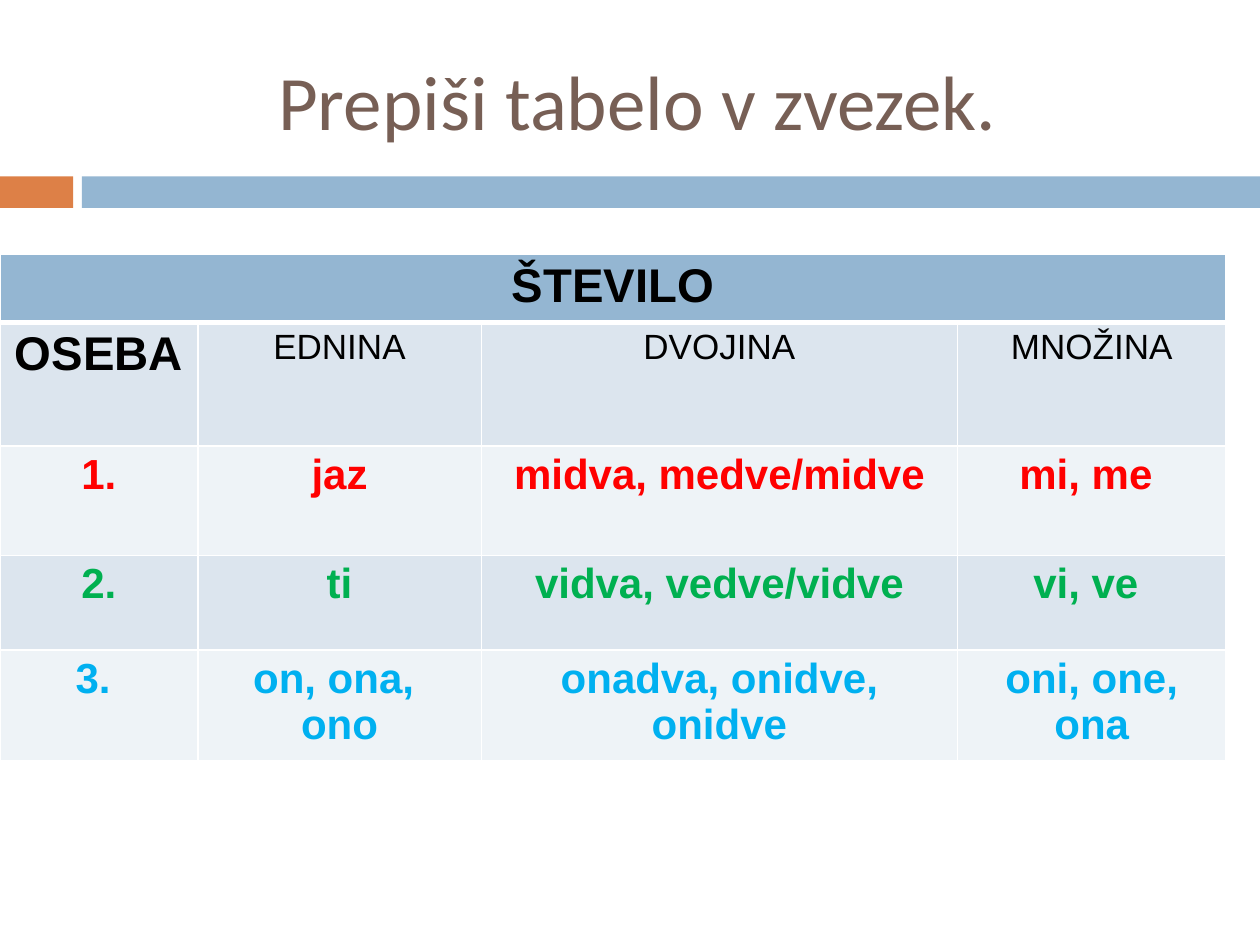
from lxml.etree import SubElement
from pptx import Presentation
from pptx.dml.color import RGBColor
from pptx.enum.shapes import MSO_SHAPE
from pptx.enum.text import MSO_ANCHOR, PP_ALIGN
from pptx.oxml.ns import qn
from pptx.util import Inches, Pt

BLUE, ORANGE, WHITE = "94B6D2", "DD8047", "FFFFFF"
BANDS = ["DCE5EE", "EEF3F7"]
COLS = [1.57, 2.25, 3.78, 2.13]
ROWS = [0.54, 0.98, 0.87, 0.75, 0.87]
HEAD = {"size": Pt(27), "bold": True, "name": "Arial"}
LABEL = {"size": Pt(20), "bold": False, "name": "Arial"}
BODY = {"size": Pt(24), "bold": True, "name": "Arial"}
TITLE = {"size": Pt(44), "bold": False, "name": "Calibri"}
NUMBERS = ["OSEBA", "EDNINA", "DVOJINA", "MNOŽINA"]
PRONOUNS = [
    ("FF0000", ["1.", "jaz", "midva, medve/midve", "mi, me "]),
    ("00B050", ["2.", "ti", "vidva, vedve/vidve", "vi, ve "]),
    ("00B0F0", ["3. ", "on, ona, \nono", "onadva, onidve, onidve",
                "oni, one,\nona"]),
]


def paint(fill, color):
    fill.solid()
    fill.fore_color.rgb = RGBColor.from_string(color)


def write(frame, text, style, color):
    """Fill a text frame with centred paragraphs, one per line."""
    frame.text = text
    for para in frame.paragraphs:
        para.alignment = PP_ALIGN.CENTER
        for run in para.runs:
            for key, value in style.items():
                setattr(run.font, key, value)
            run.font.color.rgb = RGBColor.from_string(color)


def add_bar(slide, left, width, color):
    bar = slide.shapes.add_shape(MSO_SHAPE.RECTANGLE, Inches(left),
                                 Inches(1.4), Inches(width), Inches(0.25))
    bar.shadow.inherit = False
    paint(bar.fill, color)
    bar.line.fill.background()


def add_title(slide, text):
    box = slide.shapes.add_textbox(Inches(0.67), Inches(0.25),
                                   Inches(8.92), Inches(1.08))
    frame = box.text_frame
    frame.word_wrap = True
    frame.vertical_anchor = MSO_ANCHOR.MIDDLE
    write(frame, text, TITLE, "775F55")


def edge(cell, top, bottom):
    """Give a cell white borders; top and bottom are widths in points."""
    props = cell._tc.get_or_add_tcPr()
    for side, width in zip("LRTB", (1, 1, top, bottom)):
        line = SubElement(props, qn(f"a:ln{side}"), w=str(Pt(width)))
        fill = SubElement(line, qn("a:solidFill"))
        SubElement(fill, qn("a:srgbClr"), val=WHITE)


def add_grid(slide):
    grid = slide.shapes.add_table(len(ROWS), len(COLS), Inches(0), Inches(2.02),
                                  Inches(sum(COLS)), Inches(sum(ROWS))).table
    for col, width in zip(grid.columns, COLS):
        col.width = Inches(width)
    for row, height in zip(grid.rows, ROWS):
        row.height = Inches(height)
    for r, row in enumerate(grid.rows):
        for cell in row.cells:
            edge(cell, 3 if r == 1 else 1, 3 if r == 0 else 1)
            paint(cell.fill, BANDS[(r - 1) % 2] if r else BLUE)
            cell.margin_left = cell.margin_right = Inches(0.1)
            cell.margin_top = cell.margin_bottom = Inches(0.04)
    grid.cell(0, 0).merge(grid.cell(0, len(COLS) - 1))
    write(grid.cell(0, 0).text_frame, "ŠTEVILO", HEAD, "000000")
    for c, text in enumerate(NUMBERS):
        write(grid.cell(1, c).text_frame, text, LABEL if c else HEAD, "000000")
    for r, (color, words) in enumerate(PRONOUNS, 2):
        for c, text in enumerate(words):
            write(grid.cell(r, c).text_frame, text, BODY, color)


def main():
    deck = Presentation()
    deck.slide_width, deck.slide_height = Inches(10), Inches(7.5)
    slide = deck.slides.add_slide(deck.slide_layouts[6])
    add_bar(slide, 0, 0.58, ORANGE)
    add_bar(slide, 0.65, 9.35, BLUE)
    add_title(slide, "Prepiši tabelo v zvezek. ")
    add_grid(slide)
    deck.save("out.pptx")


if __name__ == "__main__":
    main()
